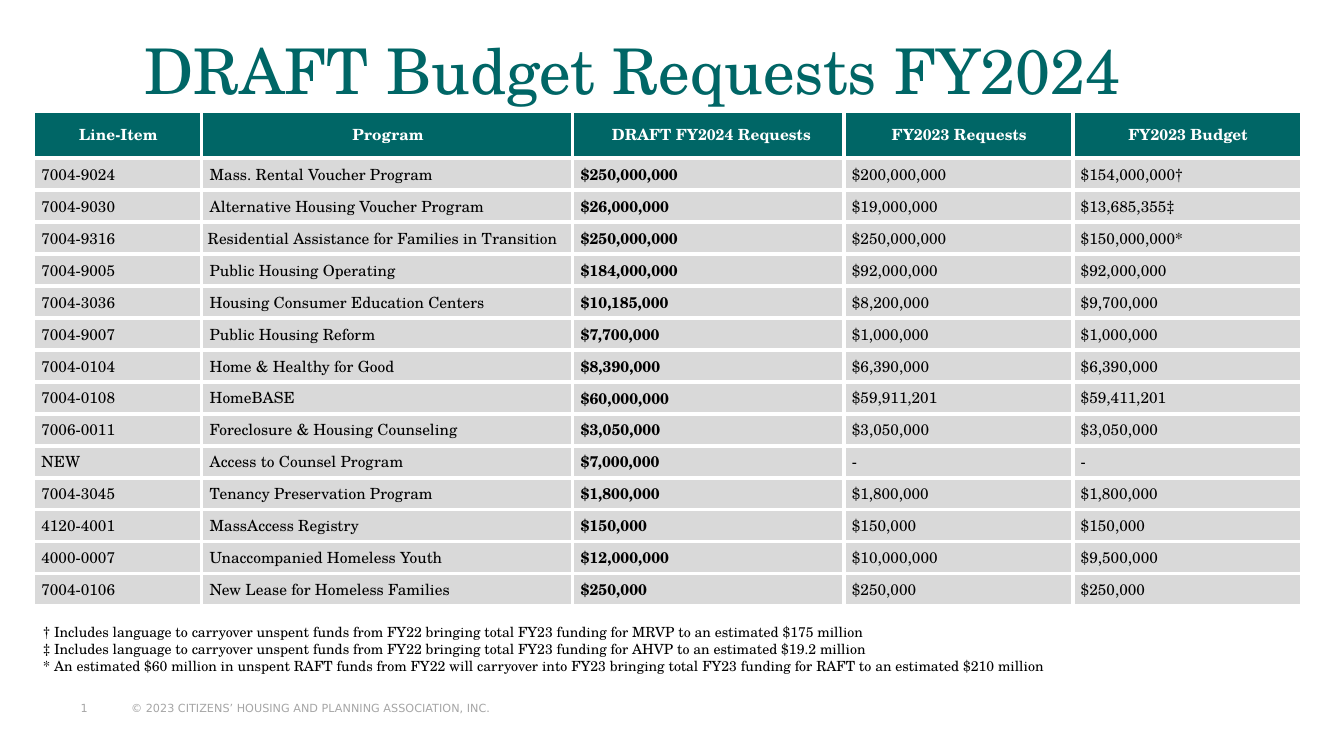
"""Build the DRAFT Budget Requests FY2024 slide."""
from lxml.etree import SubElement
from pptx import Presentation
from pptx.dml.color import RGBColor
from pptx.enum.text import MSO_ANCHOR as Anchor, MSO_AUTO_SIZE as AutoSize, PP_ALIGN as Align
from pptx.oxml.ns import qn
from pptx.util import Inches, Pt

SERIF = "TeX Gyre Schola"
TEAL, GRAY, WHITE, BLACK = "006666", "D9D9D9", "FFFFFF", "000000"


def style(paragraph, size, color, face=SERIF, bold=False):
    for run in paragraph.runs:
        run.font.size = Pt(size)
        run.font.name = face
        run.font.bold = bold
        run.font.color.rgb = RGBColor.from_string(color)


def add_borders(cell, color, width):
    properties = cell._tc.get_or_add_tcPr()
    for side in ("lnL", "lnR", "lnT", "lnB"):
        line = SubElement(properties, qn(f"a:{side}"), w=str(Pt(width)))
        SubElement(SubElement(line, qn("a:solidFill")), qn("a:srgbClr"), val=color)


HEADINGS = ("Line-Item", "Program", " DRAFT FY2024 Requests", "FY2023 Requests", "FY2023 Budget")
UNINDENTED = "Residential Assistance for Families in Transition"
REQUESTS = [
    ("7004-9024", "Mass. Rental Voucher Program", "$250,000,000", "$200,000,000", "$154,000,000†"),
    ("7004-9030", "Alternative Housing Voucher Program", "$26,000,000", "$19,000,000", "$13,685,355‡"),
    ("7004-9316", UNINDENTED, "$250,000,000", "$250,000,000", "$150,000,000*"),
    ("7004-9005", "Public Housing Operating", "$184,000,000", "$92,000,000", "$92,000,000"),
    ("7004-3036", "Housing Consumer Education Centers", "$10,185,000", "$8,200,000", "$9,700,000"),
    ("7004-9007", "Public Housing Reform", "$7,700,000", "$1,000,000", "$1,000,000"),
    ("7004-0104", "Home & Healthy for Good", "$8,390,000", "$6,390,000", "$6,390,000"),
    ("7004-0108", "HomeBASE", "$60,000,000", "$59,911,201", "$59,411,201"),
    ("7006-0011", "Foreclosure & Housing Counseling", "$3,050,000", "$3,050,000", "$3,050,000"),
    ("NEW", "Access to Counsel Program", "$7,000,000", "-", "-"),
    ("7004-3045", "Tenancy Preservation Program", "$1,800,000", "$1,800,000", "$1,800,000"),
    ("4120-4001", "MassAccess Registry", "$150,000", "$150,000", "$150,000"),
    ("4000-0007", "Unaccompanied Homeless Youth", "$12,000,000", "$10,000,000", "$9,500,000"),
    ("7004-0106", "New Lease for Homeless Families", "$250,000", "$250,000", "$250,000"),
]
NOTES = [
    "† Includes language to carryover unspent funds from FY22 bringing total FY23 funding for MRVP to an estimated $175 million",
    "‡ Includes language to carryover unspent funds from FY22 bringing total FY23 funding for AHVP to an estimated $19.2 million",
    "* An estimated $60 million in unspent RAFT funds from FY22 will carryover into FY23 bringing total FY23 funding for RAFT to an estimated $210 million",
]

deck = Presentation()
deck.slide_width, deck.slide_height = Inches(13.33), Inches(7.5)
slide = deck.slides.add_slide(deck.slide_layouts[5])

footer = slide.shapes.add_textbox(Inches(0.67), Inches(6.89), Inches(6.24), Inches(0.34)).text_frame
footer.word_wrap = True
footer.margin_left = footer.margin_right = Inches(0.13)
footer.margin_top = footer.margin_bottom = Inches(0.07)
footer.text = "1\t© 2023 CITIZENS’ HOUSING AND PLANNING ASSOCIATION, INC."
style(footer.paragraphs[0], 8, "A6A6A6", "DejaVu Sans")

title = slide.shapes.title
title.left, title.top, title.width, title.height = Inches(0.98), Inches(0.31), Inches(10.59), Inches(0.9)
heading = title.text_frame
heading.text = "DRAFT Budget Requests FY2024"
heading.auto_size = AutoSize.NONE
heading.vertical_anchor = Anchor.TOP
heading.margin_left = heading.margin_right = heading.margin_top = heading.margin_bottom = 0
heading.paragraphs[0].alignment = Align.CENTER
style(heading.paragraphs[0], 45, TEAL)

budget_rows = [HEADINGS, *REQUESTS]
table_height, header_height = 4.91, 0.47
budget = slide.shapes.add_table(
    len(budget_rows), len(HEADINGS), Inches(0.33), Inches(1.1), Inches(12.58), Inches(table_height)
).table
for column, width in zip(budget.columns, (1.67, 3.68, 2.69, 2.27, 2.27)):
    column.width = Inches(width)
for row in budget.rows:
    row.height = Inches((table_height - header_height) / len(REQUESTS))
budget.rows[0].height = Inches(header_height)

for row_index, values in enumerate(budget_rows):
    is_header = row_index == 0
    for column_index, value in enumerate(values):
        cell = budget.cell(row_index, column_index)
        cell.text = value
        cell.vertical_anchor = Anchor.MIDDLE
        cell.margin_left = cell.margin_right = Inches(0.06)
        cell.margin_top = cell.margin_bottom = 0
        add_borders(cell, WHITE, 3)
        cell.fill.solid()
        cell.fill.fore_color.rgb = RGBColor.from_string(TEAL if is_header else GRAY)
        entry = cell.text_frame.paragraphs[0]
        entry.alignment = Align.CENTER if is_header else Align.LEFT
        if value != UNINDENTED:
            entry._p.get_or_add_pPr().set("indent", str(Inches(0.02)))
        style(entry, 11, WHITE if is_header else BLACK, bold=is_header or column_index == 2)

footnotes = slide.shapes.add_textbox(Inches(0.33), Inches(6.14), Inches(12.58), Inches(0.61)).text_frame
footnotes.word_wrap = True
footnotes.auto_size = AutoSize.SHAPE_TO_FIT_TEXT
footnotes.text = "\n".join(NOTES)
for note in footnotes.paragraphs:
    style(note, 10, BLACK)

deck.save("out.pptx")
